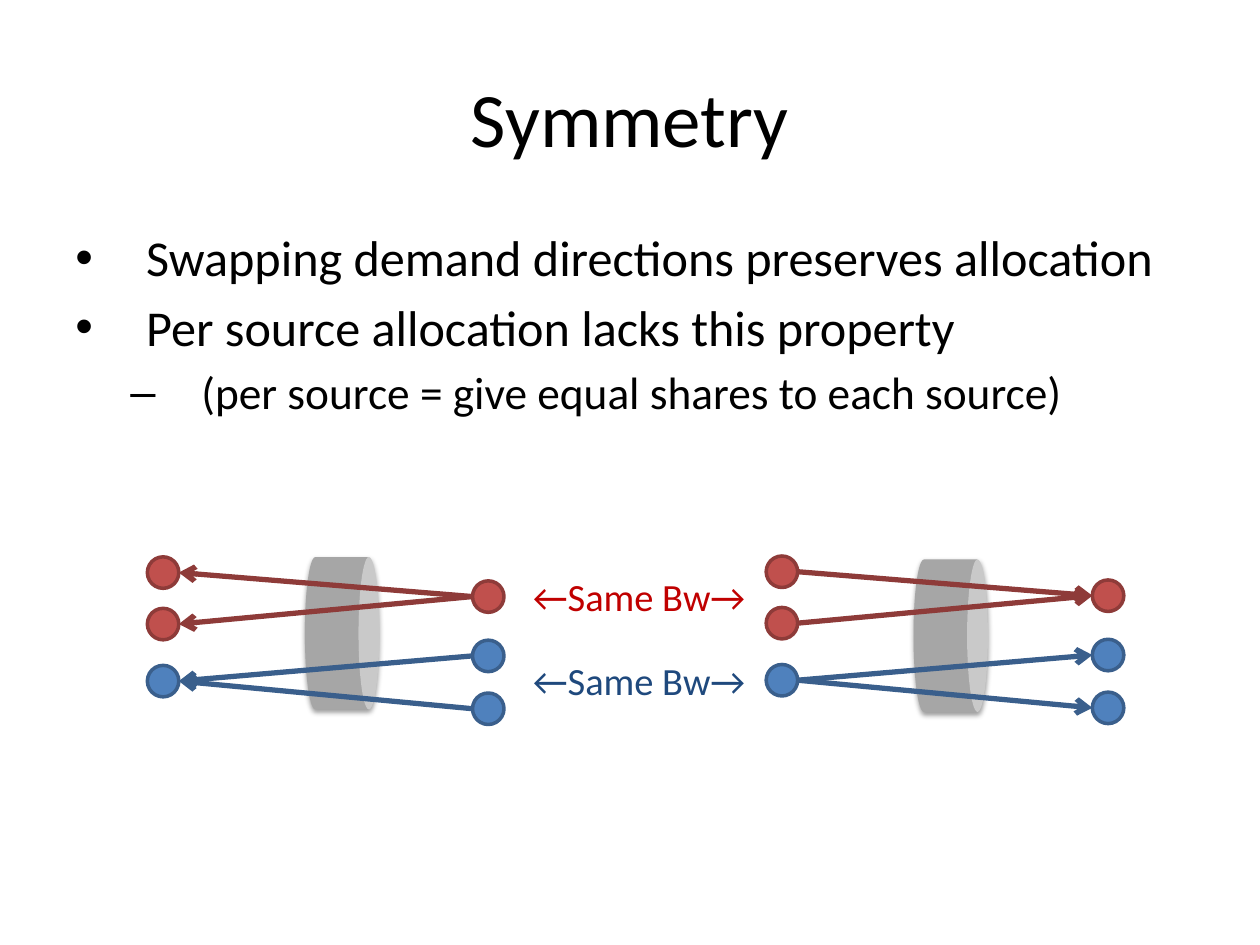
from typing import NamedTuple

from lxml import etree
from pptx import Presentation
from pptx.dml.color import RGBColor
from pptx.enum.shapes import MSO_CONNECTOR, MSO_SHAPE
from pptx.enum.text import MSO_ANCHOR, PP_ALIGN
from pptx.oxml.ns import qn
from pptx.util import Pt

STRAIGHT = MSO_CONNECTOR.STRAIGHT
CAN, OVAL = MSO_SHAPE.CAN, MSO_SHAPE.OVAL
TOP, MIDDLE = MSO_ANCHOR.TOP, MSO_ANCHOR.MIDDLE
LEFT, CENTER = PP_ALIGN.LEFT, PP_ALIGN.CENTER

COLORS = {
    "text": "000000", "pipe": "A6A6A6",
    "red": "C0504D", "red_edge": "8E3B39", "red_label": "C00000",
    "blue": "4F81BD", "blue_edge": "3A5F8C", "blue_label": "1F497D",
}
NODE_SIZE = 18
LEFT_NODES = ((318.2, "red"), (347.6, "red"), (380.2, "blue"))
RIGHT_NODES = ((331.9, "red"), (365.8, "blue"), (396, "blue"))
LINKS = ((0, 0), (1, 0), (2, 1), (2, 2))


class Box(NamedTuple):
    left: float
    top: float
    width: float
    height: float


class Bullet(NamedTuple):
    text: str
    symbol: str
    size: float
    indent: float


class Network(NamedTuple):
    left: float
    right: float
    shift: float
    pipe: Box
    leftward: bool


BULLETS = (
    Bullet("Swapping demand directions preserves allocation", "•", 28.7, 40.5),
    Bullet("Per source allocation lacks this property", "•", 28.7, 40.5),
    Bullet("(per source = give equal shares to each source)", "–", 25.9, 72),
)
NETWORKS = (
    Network(84.2, 270, 0, Box(151.9, 340.6, 87.1, 42.5), True),
    Network(437.8, 624.2, -0.5, Box(499.7, 342, 87.1, 42.5), False),
)
LABELS = ((324, "red_label"), (372.2, "blue_label"))


def color(name: str) -> RGBColor:
    return RGBColor.from_string(COLORS[name])


def add_frame(page, box: Box, wrap: bool = True, anchor=TOP):
    frame = page.shapes.add_textbox(*map(Pt, box)).text_frame
    frame.word_wrap = wrap
    frame.vertical_anchor = anchor
    return frame


def write(para, text: str, *, size: float, fill: str = "text", align=LEFT) -> None:
    para.alignment = align
    span = para.add_run()
    span.text = text
    span.font.name = "Calibri"
    span.font.size = Pt(size)
    span.font.color.rgb = color(fill)


def set_bullet(para, bullet: Bullet) -> None:
    para.space_before = Pt(round(bullet.size * 0.18, 1))
    properties = para._p.get_or_add_pPr()
    properties.set("marL", str(Pt(bullet.indent)))
    properties.set("indent", str(Pt(-40.5)))
    font = etree.SubElement(properties, qn("a:buFont"))
    font.set("typeface", "Arial")
    etree.SubElement(properties, qn("a:buChar")).set("char", bullet.symbol)


def add_pipe(page, box: Box) -> None:
    pipe = page.shapes.add_shape(CAN, *map(Pt, box))
    pipe.rotation = 90
    pipe.adjustments[0] = 0.28
    pipe.fill.solid()
    pipe.fill.fore_color.rgb = color("pipe")
    pipe.line.fill.background()
    effects = etree.SubElement(pipe._element.spPr, qn("a:effectLst"))
    shadow = etree.SubElement(effects, qn("a:outerShdw"))
    shadow.set("blurRad", str(Pt(3.1)))
    shadow.set("dist", str(Pt(1.6)))
    shadow.set("dir", "5400000")
    shadow.set("rotWithShape", "0")
    shade = etree.SubElement(shadow, qn("a:srgbClr"))
    shade.set("val", COLORS["text"])
    etree.SubElement(shade, qn("a:alpha")).set("val", "38000")


def add_node(page, left: float, top: float, name: str) -> None:
    node = page.shapes.add_shape(OVAL, *map(Pt, (left, top, NODE_SIZE, NODE_SIZE)))
    node.shadow.inherit = False
    node.fill.solid()
    node.fill.fore_color.rgb = color(name)
    node.line.color.rgb = color(f"{name}_edge")
    node.line.width = Pt(2)


def add_arrow(page, start: tuple, end: tuple, name: str) -> None:
    arrow = page.shapes.add_connector(STRAIGHT, *map(Pt, start + end))
    arrow.line.color.rgb = color(f"{name}_edge")
    arrow.line.width = Pt(3)
    tail = etree.SubElement(arrow.line._get_or_add_ln(), qn("a:tailEnd"))
    tail.set("type", "arrow")
    etree.SubElement(arrow._element.spPr, qn("a:effectLst"))


def add_network(page, network: Network) -> None:
    for left, nodes in ((network.left, LEFT_NODES), (network.right, RIGHT_NODES)):
        for top, name in nodes:
            add_node(page, left, top + network.shift, name)
    middle = network.shift + NODE_SIZE / 2
    for left_index, right_index in LINKS:
        left_top, name = LEFT_NODES[left_index]
        right_top, _ = RIGHT_NODES[right_index]
        start = (network.left + NODE_SIZE, left_top + middle)
        end = (network.right, right_top + middle)
        if network.leftward:
            start, end = end, start
        add_arrow(page, start, end, name)


def main() -> None:
    deck = Presentation()
    deck.slide_width, deck.slide_height = Pt(720), Pt(540)
    page = deck.slides.add_slide(deck.slide_layouts[6])

    for network in NETWORKS:
        add_pipe(page, network.pipe)

    title = add_frame(page, Box(36, 21.6, 648, 90), anchor=MIDDLE)
    write(title.paragraphs[0], "Symmetry", size=44, align=CENTER)

    body = add_frame(page, Box(36, 126, 648, 144))
    for index, bullet in enumerate(BULLETS):
        para = body.add_paragraph() if index else body.paragraphs[0]
        set_bullet(para, bullet)
        write(para, bullet.text, size=bullet.size)

    for network in NETWORKS:
        add_network(page, network)

    for top, fill in LABELS:
        label = add_frame(page, Box(297.4, top, 141.1, 33.8), wrap=False)
        write(label.paragraphs[0], "←Same Bw→", size=22, fill=fill)

    deck.save("out.pptx")


if __name__ == "__main__":
    main()
